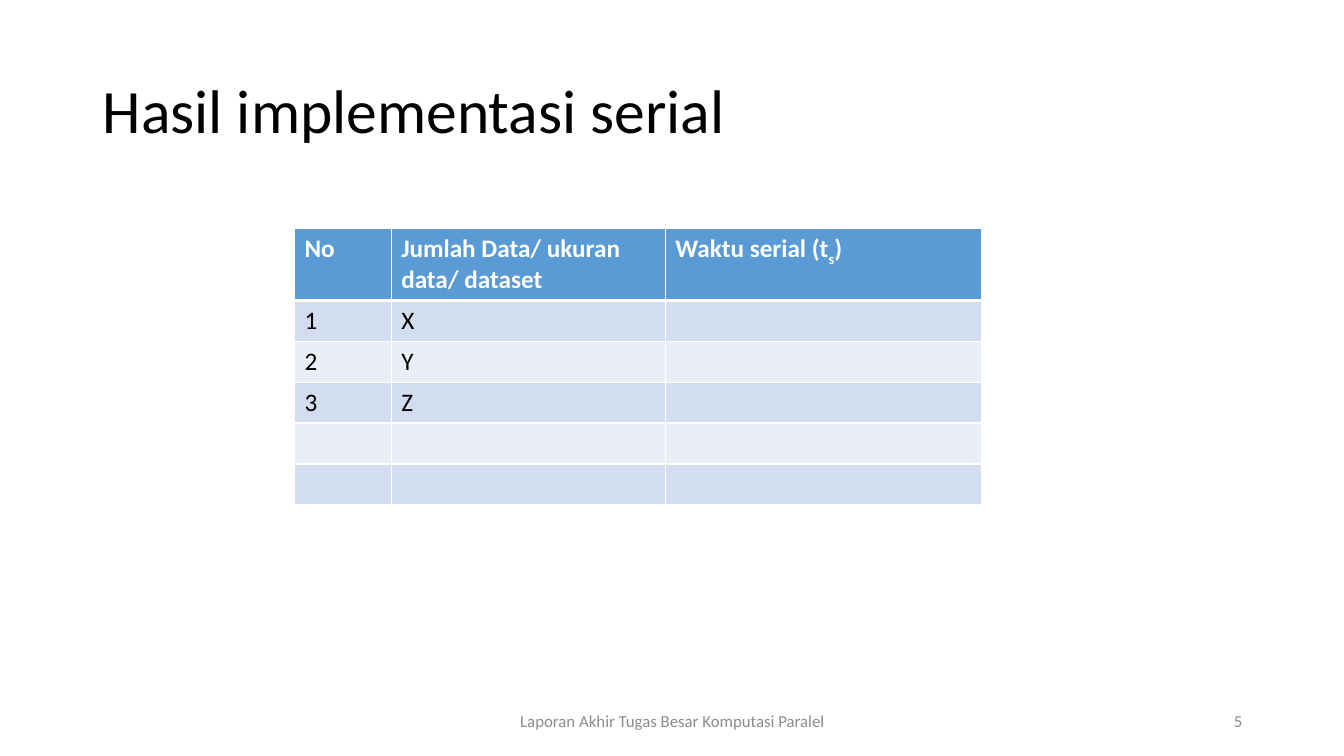
"""Build the slide with the serial implementation results table."""
import pptx
import pptx.util
import pptx.dml.color
import pptx.enum.text
import lxml.etree
from pptx.oxml.ns import qn

COLORS = {"ink": "000000", "white": "FFFFFF", "head": "5B9BD5",
          "odd": "D2DEEF", "even": "EAEFF7", "muted": "8C8C8C"}
TITLE = "Hasil implementasi serial"
HEADINGS = [["No"], ["Jumlah Data/ ukuran data/ dataset"], ["Waktu serial (t", "s", ")"]]
RESULTS = [("1", "X", ""), ("2", "Y", ""), ("3", "Z", ""), ("", "", ""), ("", "", "")]
FOOTERS = [("Laporan Akhir Tugas Besar Komputasi Paralel", 4.42, 4.5, "CENTER"),
           ("5", 9.42, 3, "RIGHT")]
FOOTER_TOP, FOOTER_HEIGHT = 6.95, 0.4
TABLE_LEFT, TABLE_TOP = 2.92, 2.27
COLUMNS = [0.96, 2.72, 3.14]
ROWS = [0.7] + [0.4] * len(RESULTS)

inch = pptx.util.Inches
ALIGN = pptx.enum.text.PP_ALIGN
MIDDLE = pptx.enum.text.MSO_ANCHOR.MIDDLE


def rgb(name):
    """Return the named colour."""
    return pptx.dml.color.RGBColor.from_string(COLORS[name])


def write(frame, *parts, size=18, color="ink", bold=False, align="LEFT", spacing=1.0):
    """Write one paragraph, with every second part as a subscript."""
    frame.word_wrap = True
    paragraph = frame.paragraphs[0]
    paragraph.alignment = ALIGN[align]
    paragraph.line_spacing = spacing
    for index, part in enumerate(parts):
        run = paragraph.add_run()
        run.text = part
        run.font.name = "Calibri"
        run.font.size = pptx.util.Pt(size)
        run.font.bold = bold
        run.font.color.rgb = rgb(color)
        if index % 2:
            run.font._element.set("baseline", "-25000")


def paint(cell, fill, edges):
    """Give a cell its white borders and its fill."""
    properties = cell._tc.get_or_add_tcPr()
    for edge, points in edges.items():
        line = lxml.etree.SubElement(properties, qn(f"a:{edge}"), w=str(pptx.util.Pt(points)))
        solid = lxml.etree.SubElement(line, qn("a:solidFill"))
        lxml.etree.SubElement(solid, qn("a:srgbClr"), val=COLORS["white"])
    cell.fill.solid()
    cell.fill.fore_color.rgb = rgb(fill)


def main():
    """Place the title, table and footers, then save."""
    deck = pptx.Presentation()
    deck.slide_width, deck.slide_height = inch(13.33), inch(7.5)
    slide = deck.slides.add_slide(deck.slide_layouts[5])

    title = slide.shapes.title
    title.left, title.top, title.width, title.height = map(inch, (0.92, 0.4, 11.5, 1.45))
    title.text_frame.vertical_anchor = MIDDLE
    write(title.text_frame, TITLE, size=44, spacing=0.9)

    table = slide.shapes.add_table(
        len(ROWS), len(COLUMNS), inch(TABLE_LEFT), inch(TABLE_TOP),
        inch(sum(COLUMNS)), inch(sum(ROWS))).table
    for column, width in zip(table.columns, COLUMNS):
        column.width = inch(width)
    for row, height in zip(table.rows, ROWS):
        row.height = inch(height)
    for r, texts in enumerate([HEADINGS, *RESULTS]):
        head = r == 0
        fill = "head" if head else ("odd" if r % 2 else "even")
        edges = {"lnL": 1, "lnR": 1, "lnT": 3 if r == 1 else 1, "lnB": 3 if head else 1}
        for c, text in enumerate(texts):
            cell = table.cell(r, c)
            paint(cell, fill, edges)
            if text:
                write(cell.text_frame, *text, color="white" if head else "ink", bold=head)

    for text, left, width, align in FOOTERS:
        footer = slide.shapes.add_textbox(
            inch(left), inch(FOOTER_TOP), inch(width), inch(FOOTER_HEIGHT))
        footer.text_frame.vertical_anchor = MIDDLE
        write(footer.text_frame, text, size=12, color="muted", align=align)

    deck.save("out.pptx")


if __name__ == "__main__":
    main()
